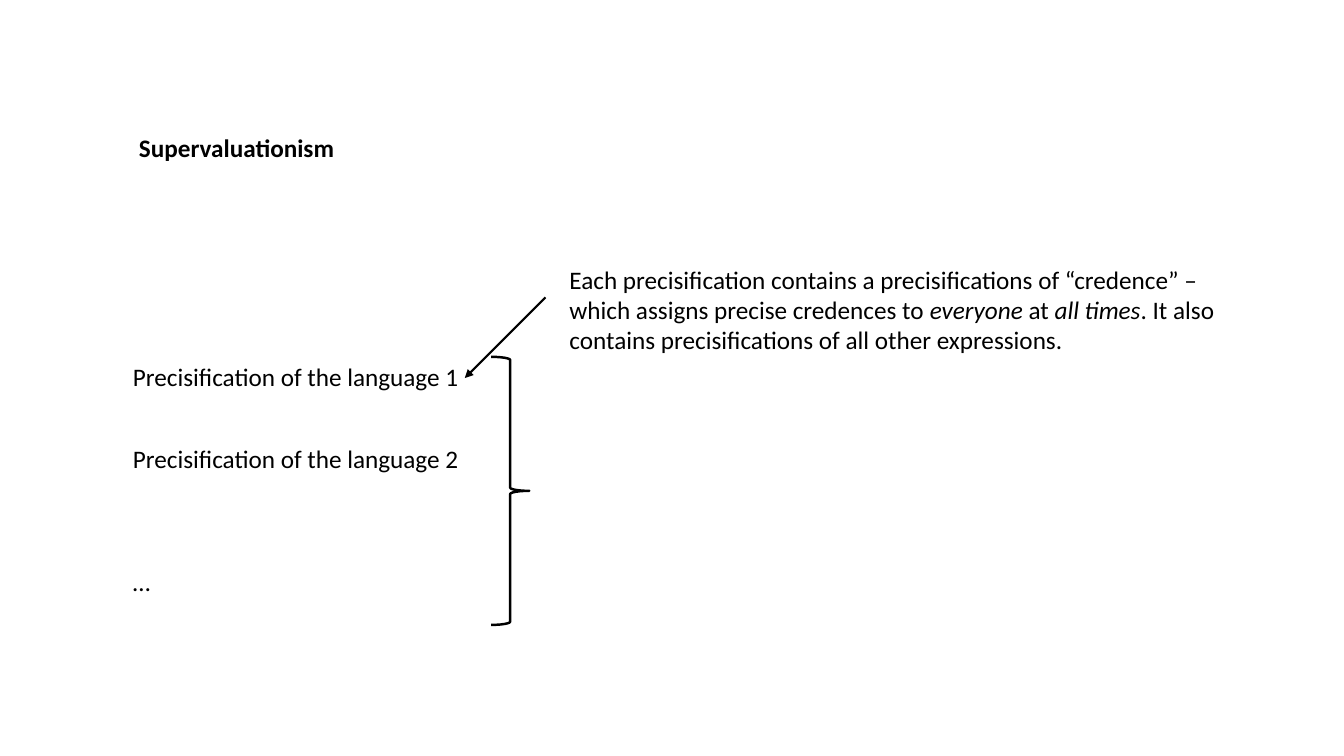
from lxml.etree import SubElement
from pptx import Presentation
from pptx.dml.color import RGBColor
from pptx.enum.shapes import MSO_CONNECTOR, MSO_SHAPE
from pptx.oxml.ns import qn
from pptx.util import Inches, Pt

BLACK = RGBColor(0, 0, 0)
FONT = "Calibri"
SIZE = Pt(18)

# Each text: (left, top, width, height), bold, runs of (words, italic)
TEXTS = [
    ((1.28, 1.26, 6.66, 0.4), True, [("Supervaluationism", False)]),
    ((1.22, 3.54, 8.59, 0.4), False,
     [("Precisification of the language 1", False)]),
    ((1.22, 4.35, 4.59, 0.4), False,
     [("Precisification of the language 2", False)]),
    ((1.22, 5.57, 4.59, 0.4), False, [("…", False)]),
    ((5.55, 2.57, 6.74, 1.01), False, [
        ("Each precisification contains a precisifications of “credence” – "
         "which assigns precise credences to ", False),
        ("everyone", True),
        (" at ", False),
        ("all times", True),
        (". It also contains precisifications of all other expressions.",
         False),
    ]),
]
BRACE = (4.87, 3.54, 0.38, 2.66)
ARROW = (5.41, 2.95, 4.61, 3.75)


def inches(values):
    return [Inches(v) for v in values]


def add_text(slide, place, bold, runs):
    frame = slide.shapes.add_textbox(*inches(place)).text_frame
    frame.word_wrap = True
    para = frame.paragraphs[0]
    font = para.font
    font.name, font.size, font.bold = FONT, SIZE, bold
    font.color.rgb = BLACK
    for words, italic in runs:
        run = para.add_run()
        run.text = words
        if italic:
            run.font.italic = True


def add_brace(slide):
    brace = slide.shapes.add_shape(MSO_SHAPE.RIGHT_BRACE, *inches(BRACE))
    brace.shadow.inherit = False
    brace.fill.background()
    brace.line.color.rgb = BLACK
    brace.line.width = Pt(1.75)


def add_arrow(slide):
    arrow = slide.shapes.add_connector(MSO_CONNECTOR.STRAIGHT, *inches(ARROW))
    arrow.line.color.rgb = BLACK
    arrow.line.width = Pt(1.5)
    props = arrow.element.spPr
    SubElement(props.find(qn("a:ln")), qn("a:tailEnd"), type="triangle")
    SubElement(props, qn("a:effectLst"))


def main():
    deck = Presentation()
    deck.slide_width, deck.slide_height = inches((13.33, 7.5))
    slide = deck.slides.add_slide(deck.slide_layouts[6])
    for place, bold, runs in TEXTS:
        add_text(slide, place, bold, runs)
    add_brace(slide)
    add_arrow(slide)
    deck.save("out.pptx")


if __name__ == "__main__":
    main()
